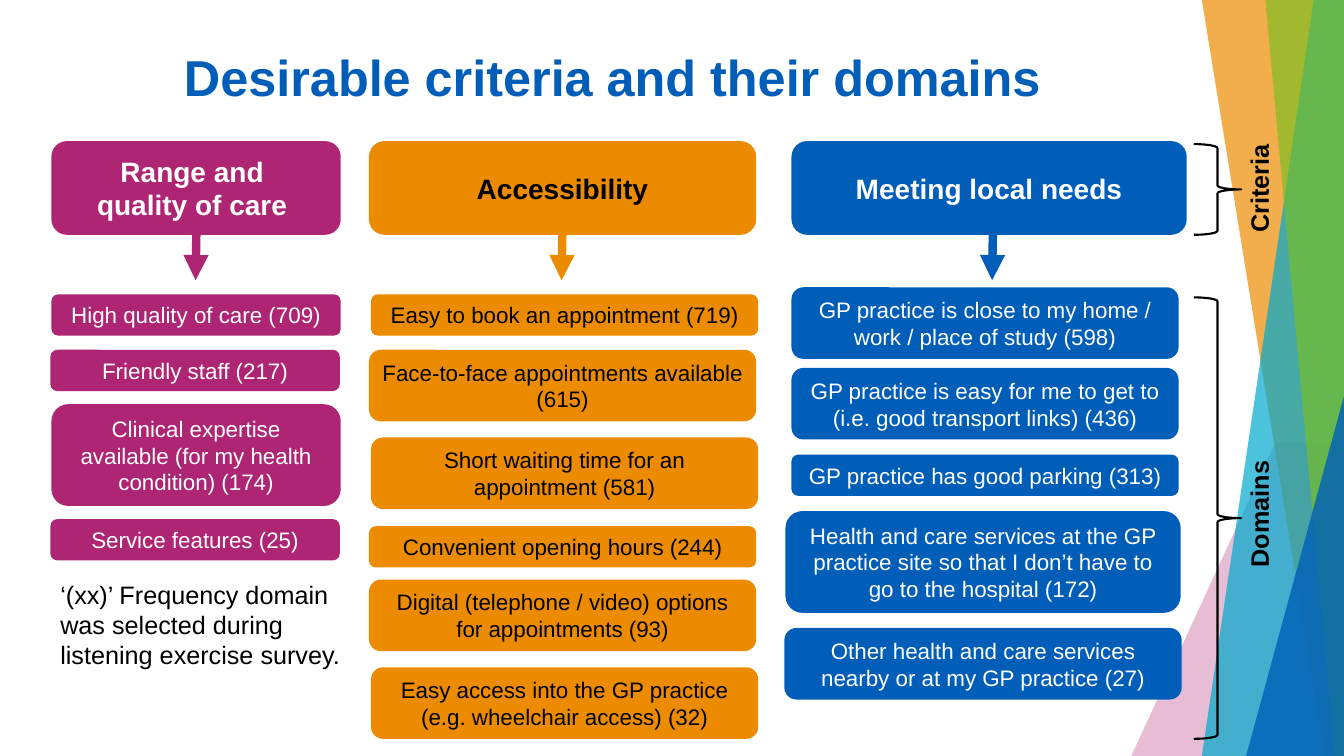
"""Build the slide on desirable criteria and their domains."""
from dataclasses import dataclass
from typing import NamedTuple

from lxml import etree
from pptx import Presentation
from pptx import util as u
from pptx.dml import color
from pptx.enum import shapes, text
from pptx.oxml import ns


@dataclass(frozen=True)
class Theme:
    font: str = "Arial"
    plum: str = "AE2573"
    gold: str = "ED8B00"
    blue: str = "005EB8"
    teal: str = "00A9CE"
    green: str = "78BE20"
    black: str = "000000"
    white: str = "FFFFFF"
    title: int = 36
    head: int = 20
    label: int = 18
    body: int = 16


class Box(NamedTuple):
    x: float
    y: float
    w: float
    h: float


class Shard(NamedTuple):
    points: list[tuple[float, float]]
    fill: str
    alpha: int


class Domain(NamedTuple):
    x: float
    y: float
    w: float
    rows: int
    words: str


class Column(NamedTuple):
    head: list[str]
    box: Box
    fill: str
    ink: str
    stem: float
    domains: list[Domain]


class Brace(NamedTuple):
    box: Box
    words: str
    label: Box


T = Theme()

SHARDS = [
    Shard([(12.65, 4.39), (13.33, 4.39), (13.33, 7.5), (11.22, 7.5)], T.plum, 30),
    Shard([(11.92, 0), (13.33, 0), (13.33, 7.5), (13.14, 7.5)], T.gold, 70),
    Shard([(13.03, 0), (13.33, 0), (13.33, 7.5), (11.92, 7.5)], T.teal, 70),
    Shard([(12.55, 0), (13.33, 0), (13.33, 7.5), (13.24, 7.5)], T.green, 65),
]

COLUMNS = [
    Column(["Range and ", "quality of care\u00a0"], Box(0.51, 1.4, 2.87, 0.93), T.plum, T.white, 1.95, [
        Domain(0.51, 2.92, 2.87, 1, "High quality of care (709)"),
        Domain(0.5, 3.47, 2.87, 1, "Friendly staff (217)"),
        Domain(0.51, 4.01, 2.87, 3, "Clinical expertise available (for my health condition) (174)"),
        Domain(0.5, 5.15, 2.87, 1, "Service features (25)"),
    ]),
    Column(["Accessibility"], Box(3.66, 1.4, 3.84, 0.93), T.gold, T.black, 5.58, [
        Domain(3.68, 2.92, 3.84, 1, "Easy to book an appointment (719)"),
        Domain(3.66, 3.47, 3.84, 2, "Face-to-face appointments available (615)"),
        Domain(3.68, 4.34, 3.84, 2, "Short waiting time for an appointment (581)"),
        Domain(3.66, 5.22, 3.84, 1, "Convenient opening hours (244)"),
        Domain(3.66, 5.75, 3.84, 2, "Digital (telephone / video) options for appointments (93)"),
        Domain(3.68, 6.62, 3.84, 2, "Easy access into the GP practice (e.g. wheelchair access) (32)"),
    ]),
    Column(["Meeting local needs"], Box(7.85, 1.4, 3.92, 0.93), T.blue, T.white, 9.85, [
        Domain(7.85, 2.85, 3.84, 2, "GP practice is close to my home / work / place of study (598)"),
        Domain(7.85, 3.65, 3.84, 2, "GP practice is easy for me to get to (i.e. good transport links) (436)"),
        Domain(7.85, 4.51, 3.84, 1, "GP practice has good parking (313)"),
        Domain(7.79, 5.07, 3.92, 3,
               "Health and care services at the GP practice site so that I don’t have to go to the hospital (172)"),
        Domain(7.78, 6.23, 3.94, 2, "Other health and care services nearby or at my GP practice (27)"),
    ]),
]

BRACES = [
    Brace(Box(11.84, 1.43, 0.47, 0.9), "Criteria", Box(11.94, 1.66, 1.09, 0.4)),
    Brace(Box(11.84, 2.95, 0.47, 4.38), "Domains", Box(11.85, 4.89, 1.27, 0.4)),
]


def inch(box: Box) -> list[u.Length]:
    """Turn a box into lengths."""
    return [u.Inches(side) for side in box]


def rgb(code: str) -> color.RGBColor:
    """Turn a hex code into a colour."""
    return color.RGBColor.from_string(code)


def paint(shape, fill: str, alpha: int = 100) -> None:
    """Give a shape a flat fill, with no line or shadow."""
    shape.shadow.inherit = False
    shape.fill.solid()
    shape.fill.fore_color.rgb = rgb(fill)
    shape.line.fill.background()
    if alpha < 100:
        tint = shape._element.spPr.find(".//" + ns.qn("a:srgbClr"))
        etree.SubElement(tint, ns.qn("a:alpha"), val=str(alpha * 1000))


def write(shape, lines: list[str], size: int, ink: str, bold: bool = False,
          align=text.PP_ALIGN.CENTER, wrap: bool = True) -> None:
    """Fill a shape with one paragraph, a run to each line."""
    frame = shape.text_frame
    frame.word_wrap = wrap
    frame.vertical_anchor = text.MSO_ANCHOR.MIDDLE
    para = frame.paragraphs[0]
    para.alignment = align
    for i, line in enumerate(lines):
        if i:
            para.add_line_break()
        run = para.add_run()
        run.text = line
        run.font.name = T.font
        run.font.size = u.Pt(size)
        run.font.bold = bold
        run.font.color.rgb = rgb(ink)


def draw_shards(slide) -> None:
    """Draw the tinted shards at the right edge."""
    for shard in SHARDS:
        start, *rest = [(u.Inches(x), u.Inches(y)) for x, y in shard.points]
        form = slide.shapes.build_freeform(*start)
        form.add_line_segments(rest)
        paint(form.convert_to_shape(), shard.fill, shard.alpha)
    wedge = slide.shapes.add_shape(shapes.MSO_SHAPE.ISOSCELES_TRIANGLE, *inch(Box(12.36, 3.93, 0.97, 3.57)))
    wedge.adjustments[0] = 1
    paint(wedge, T.blue, 80)


def draw_card(slide, box: Box, fill: str):
    """Draw a rounded card."""
    card = slide.shapes.add_shape(shapes.MSO_SHAPE.ROUNDED_RECTANGLE, *inch(box))
    paint(card, fill)
    return card


def draw_arrow(slide, x: float, fill: str) -> None:
    """Draw the arrow below a column head."""
    ends = inch(Box(x, 2.15, x - 0.01, 2.78))
    arrow = slide.shapes.add_connector(shapes.MSO_CONNECTOR.STRAIGHT, *ends)
    arrow.line.color.rgb = rgb(fill)
    arrow.line.width = u.Pt(6)
    etree.SubElement(arrow.line._get_or_add_ln(), ns.qn("a:tailEnd"), type="triangle")
    etree.SubElement(arrow._element.spPr, ns.qn("a:effectLst"))


def draw_column(slide, col: Column) -> None:
    """Draw a head, its arrow and its domains."""
    write(draw_card(slide, col.box, col.fill), col.head, T.head, col.ink, bold=True)
    draw_arrow(slide, col.stem, col.fill)
    for item in col.domains:
        box = Box(item.x, item.y, item.w, 0.11 + 0.3 * item.rows)
        write(draw_card(slide, box, col.fill), [item.words], T.body, col.ink)


def draw_brace(slide, brace: Brace) -> None:
    """Draw a brace and its upright label."""
    curl = slide.shapes.add_shape(shapes.MSO_SHAPE.RIGHT_BRACE, *inch(brace.box))
    curl.shadow.inherit = False
    curl.fill.background()
    curl.line.color.rgb = rgb(T.black)
    curl.line.width = u.Pt(1.5)
    label = slide.shapes.add_textbox(*inch(brace.label))
    label.rotation = 270
    write(label, [brace.words], T.label, T.black, bold=True, align=text.PP_ALIGN.LEFT, wrap=False)


def main() -> None:
    """Build and save the deck."""
    deck = Presentation()
    deck.slide_width, deck.slide_height = u.Inches(13.33), u.Inches(7.5)
    slide = deck.slides.add_slide(deck.slide_layouts[6])
    draw_shards(slide)
    title = slide.shapes.add_textbox(*inch(Box(0.74, 0.35, 10.81, 0.81)))
    write(title, ["Desirable criteria and their domains "], T.title, T.blue, bold=True)
    for col in COLUMNS:
        draw_column(slide, col)
    for brace in BRACES:
        draw_brace(slide, brace)
    note = slide.shapes.add_textbox(*inch(Box(0.5, 5.69, 3.33, 1.01)))
    write(note, ["‘(xx)’ Frequency domain was selected during listening exercise survey."],
          T.label, T.black, align=text.PP_ALIGN.LEFT)
    deck.save("out.pptx")


if __name__ == "__main__":
    main()
